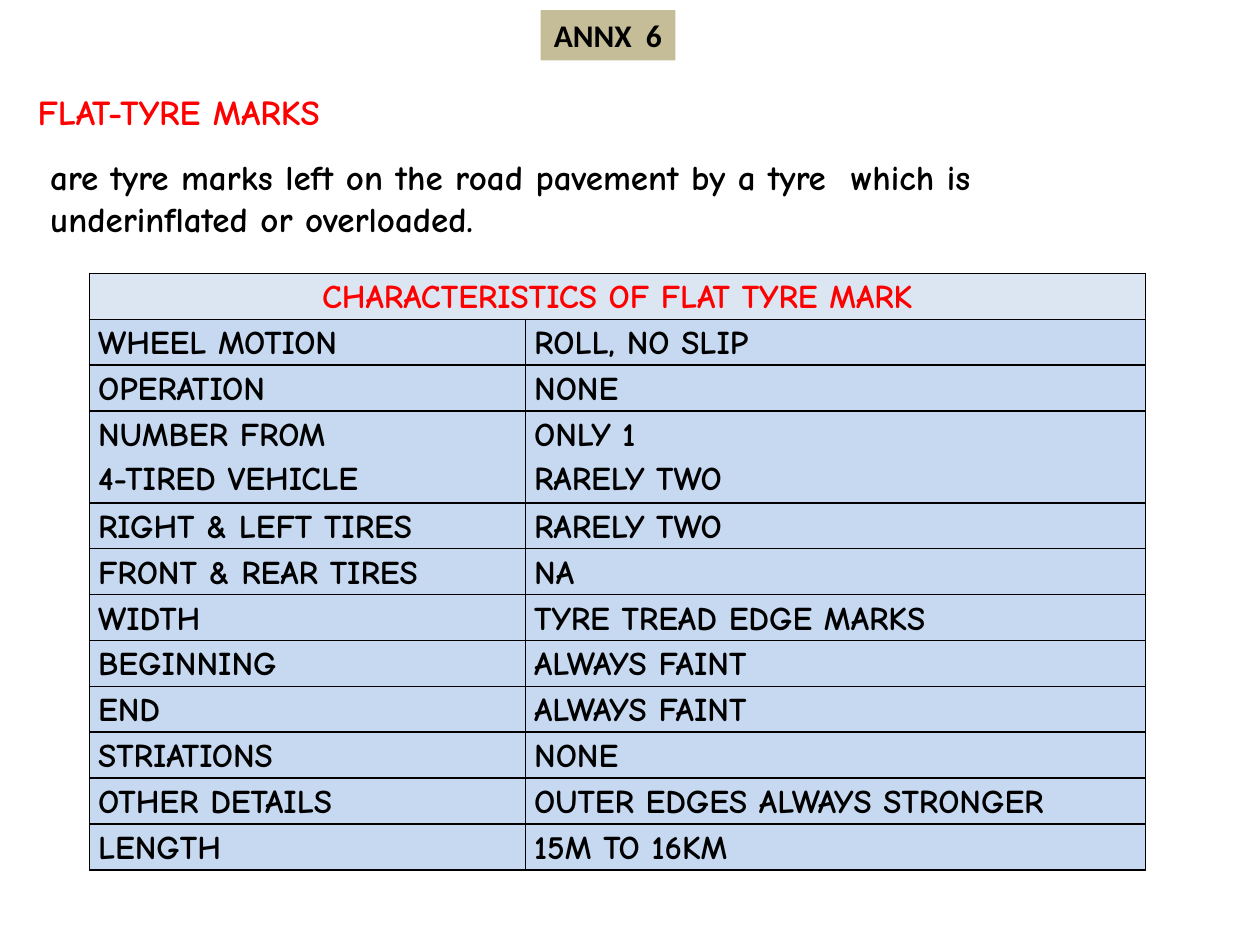
from dataclasses import dataclass

import pptx
import pptx.dml.color
import pptx.enum.text
import pptx.oxml
import pptx.oxml.ns
import pptx.util
from pptx.util import Inches


@dataclass(frozen=True)
class Theme:
    black: str = "000000"
    red: str = "FF0000"
    tag_fill: str = "C4BD97"
    heading_fill: str = "DCE6F2"
    body_fill: str = "C6D9F1"
    text_font: str = "Comic Neue"
    tag_font: str = "Calibri"
    tag_size: float = 18
    text_size: float = 20
    table_size: float = 19
    border_width: float = 1


@dataclass(frozen=True)
class Characteristic:
    label: str
    finding: str


THEME = Theme()
ROW_HEIGHT = 0.34
COLUMN_WIDTHS = (3.46, 4.92)
DEFINITION = (
    "are tyre marks left on the road pavement by a tyre  which is",
    "underinflated or overloaded.",
)
CHARACTERISTICS = (
    Characteristic("WHEEL MOTION", "ROLL, NO SLIP"),
    Characteristic("OPERATION", "NONE"),
    Characteristic("NUMBER FROM\n4-TIRED VEHICLE", "ONLY 1\nRARELY TWO"),
    Characteristic("RIGHT & LEFT TIRES", "RARELY TWO"),
    Characteristic("FRONT & REAR TIRES", "NA"),
    Characteristic("WIDTH", "TYRE TREAD EDGE MARKS"),
    Characteristic("BEGINNING", "ALWAYS FAINT"),
    Characteristic("END", "ALWAYS FAINT"),
    Characteristic("STRIATIONS", "NONE"),
    Characteristic("OTHER DETAILS", "OUTER EDGES ALWAYS STRONGER"),
    Characteristic("LENGTH", "15M TO 16KM"),
)


def rgb(value: str) -> pptx.dml.color.RGBColor:
    return pptx.dml.color.RGBColor.from_string(value)


def set_font(paragraph, size: float, color: str, name: str = THEME.text_font) -> None:
    font = paragraph.font
    font.name, font.size, font.bold = name, pptx.util.Pt(size), True
    font.color.rgb = rgb(color)


def add_borders(cell) -> None:
    properties = cell._tc.get_or_add_tcPr()
    width = pptx.util.Pt(THEME.border_width)
    for side in ("lnL", "lnR", "lnT", "lnB"):
        properties.append(pptx.oxml.parse_xml(
            f'<a:{side} {pptx.oxml.ns.nsdecls("a")} w="{width}"><a:solidFill>'
            f'<a:srgbClr val="{THEME.black}"/></a:solidFill></a:{side}>'
        ))


def format_cell(cell, text: str, fill: str, color: str, alignment) -> None:
    cell.text = text
    cell.margin_left = cell.margin_right = Inches(0.07)
    cell.margin_top = cell.margin_bottom = 0
    add_borders(cell)
    cell.fill.solid()
    cell.fill.fore_color.rgb = rgb(fill)
    for paragraph in cell.text_frame.paragraphs:
        paragraph.alignment = alignment
        paragraph.line_spacing = 1.15
        set_font(paragraph, THEME.table_size, color)


def add_annex_tag(slide) -> None:
    tag = slide.shapes.title
    tag.left, tag.top = Inches(4.29), Inches(0.08)
    tag.width, tag.height = Inches(1.07), Inches(0.4)
    tag.fill.solid()
    tag.fill.fore_color.rgb = rgb(THEME.tag_fill)
    frame = tag.text_frame
    frame.text = "ANNX  6"
    frame.word_wrap = False
    frame.auto_size = pptx.enum.text.MSO_AUTO_SIZE.NONE
    set_font(frame.paragraphs[0], THEME.tag_size, THEME.black, THEME.tag_font)


def add_definition(slide) -> None:
    box = slide.shapes.add_textbox(Inches(0.2), Inches(0.67), Inches(8.95), Inches(1.29))
    frame = box.text_frame
    frame.word_wrap = True
    heading = frame.paragraphs[0]
    heading.text = "FLAT-TYRE MARKS"
    heading.space_after = pptx.util.Pt(13)
    set_font(heading, THEME.text_size, THEME.red)
    for line in DEFINITION:
        paragraph = frame.add_paragraph()
        paragraph.text = line
        paragraph._p.get_or_add_pPr().set("marL", str(Inches(0.1)))
        set_font(paragraph, THEME.text_size, THEME.black)


def add_characteristics(slide) -> None:
    line_counts = [1] + [item.label.count("\n") + 1 for item in CHARACTERISTICS]
    table = slide.shapes.add_table(
        len(line_counts), len(COLUMN_WIDTHS), Inches(0.71), Inches(2.17),
        Inches(sum(COLUMN_WIDTHS)), Inches(ROW_HEIGHT * sum(line_counts)),
    ).table
    table.first_row = table.horz_banding = False
    for column, width in zip(table.columns, COLUMN_WIDTHS):
        column.width = Inches(width)
    for row, lines in zip(table.rows, line_counts):
        row.height = Inches(ROW_HEIGHT * lines)
    align = pptx.enum.text.PP_ALIGN
    heading = table.cell(0, 0)
    heading.merge(table.cell(0, 1))
    format_cell(heading, "CHARACTERISTICS OF FLAT TYRE MARK",
                THEME.heading_fill, THEME.red, align.CENTER)
    add_borders(table.cell(0, 1))
    for row_index, item in enumerate(CHARACTERISTICS, start=1):
        for column_index, text in enumerate((item.label, item.finding)):
            format_cell(table.cell(row_index, column_index), text,
                        THEME.body_fill, THEME.black, align.LEFT)


def main() -> None:
    presentation = pptx.Presentation()
    presentation.slide_width, presentation.slide_height = Inches(10), Inches(7.5)
    slide = presentation.slides.add_slide(presentation.slide_layouts[5])
    add_annex_tag(slide)
    add_definition(slide)
    add_characteristics(slide)
    presentation.save("out.pptx")


if __name__ == "__main__":
    main()
